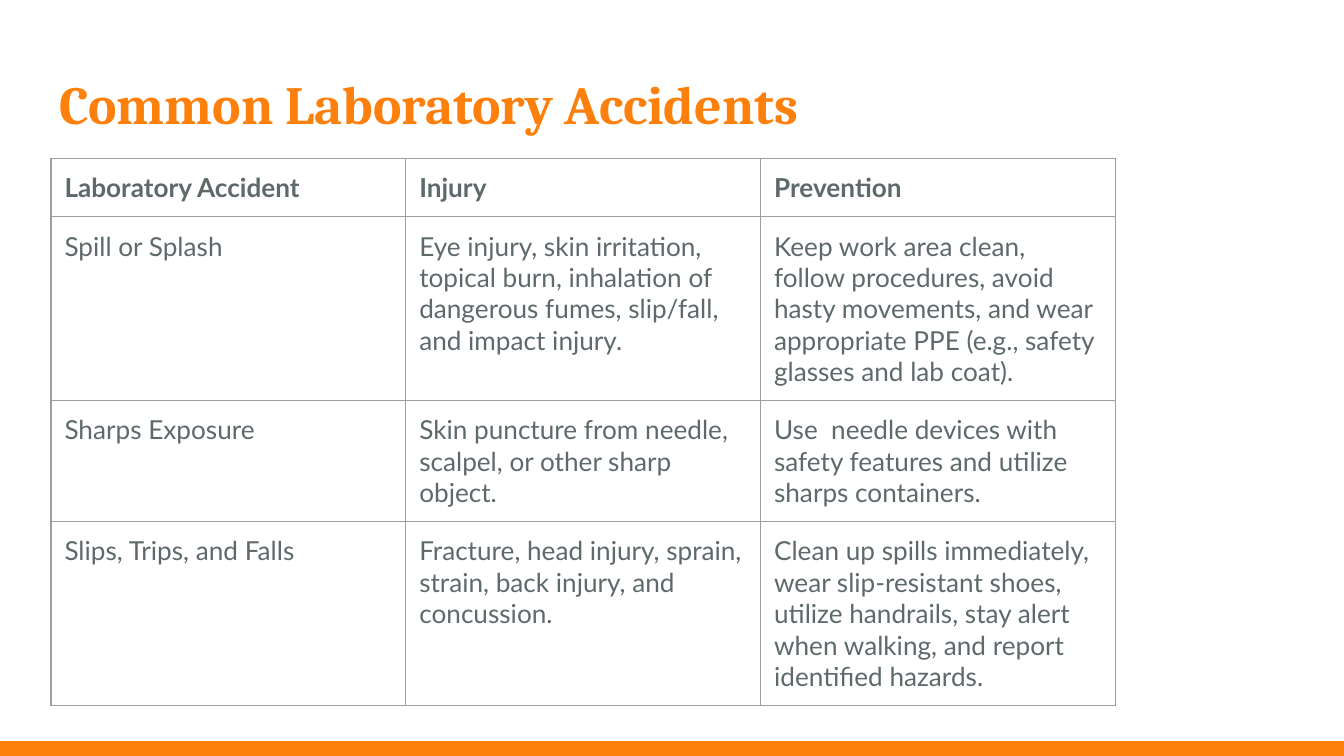
"""Build a slide with a table of common laboratory accidents."""
from lxml import etree
from pptx import Presentation
from pptx import util as u
from pptx.dml.color import RGBColor
from pptx.enum import shapes, text
from pptx.oxml.ns import qn

COLORS = {"accent": "FD800D", "body": "5E696C", "border": "9E9E9E", "white": "FFFFFF"}
MARGINS = dict.fromkeys(("margin_left", "margin_top", "margin_right", "margin_bottom"), u.Inches(0.1))
TITLE_FONT = {"name": "Cambria", "size": u.Pt(28.8), "bold": True}
BODY_FONT = {"name": "Lato", "size": u.Pt(14)}
ROWS = [
    ("Laboratory Accident", "Injury", "Prevention"),
    (
        "Spill or Splash",
        "Eye injury, skin irritation, topical burn, inhalation of dangerous fumes, slip/fall, and impact injury.",
        "Keep work area clean, follow procedures, avoid hasty movements, and wear appropriate PPE "
        "(e.g., safety glasses and lab coat).",
    ),
    (
        "Sharps Exposure",
        "Skin puncture from needle, scalpel, or other sharp object.",
        "Use  needle devices with safety features and utilize sharps containers.",
    ),
    (
        "Slips, Trips, and Falls",
        "Fracture, head injury, sprain, strain, back injury, and concussion.",
        "Clean up spills immediately, wear slip-resistant shoes, utilize handrails, stay alert when walking, "
        "and report identified hazards.",
    ),
]


def apply(target, values):
    for name, value in values.items():
        setattr(target, name, value)


def write(frame, words, font, color):
    para = frame.paragraphs[0]
    para.alignment = text.PP_ALIGN.LEFT
    span = para.add_run()
    span.text = words
    apply(span.font, font)
    span.font.color.rgb = RGBColor.from_string(COLORS[color])


deck = Presentation()
page_width = u.Inches(10)
page_height = page_width * 9 // 16
apply(deck, {"slide_width": page_width, "slide_height": page_height})
page = deck.slides.add_slide(deck.slide_layouts[5])
page.background.fill.solid()
page.background.fill.fore_color.rgb = RGBColor.from_string(COLORS["white"])

bar_height = u.Inches(0.11)
bar = page.shapes.add_shape(
    shapes.MSO_SHAPE.RECTANGLE, u.Inches(0), page_height - bar_height, page_width, bar_height
)
bar.shadow.inherit = False
bar.fill.solid()
bar.fill.fore_color.rgb = RGBColor.from_string(COLORS["accent"])
bar.line.fill.background()

title = page.shapes.title
apply(title, {"left": u.Inches(0.34), "top": u.Inches(0.43), "width": u.Inches(9.32), "height": u.Inches(0.68)})
apply(title.text_frame, {
    **MARGINS,
    "word_wrap": True,
    "auto_size": text.MSO_AUTO_SIZE.NONE,
    "vertical_anchor": text.MSO_ANCHOR.TOP,
})
write(title.text_frame, "Common Laboratory Accidents", TITLE_FONT, "accent")

column_width, row_height = u.Inches(2.64), u.Inches(0.42)
table = page.shapes.add_table(
    len(ROWS), 3, u.Inches(0.38), u.Inches(1.18), column_width * 3, row_height * len(ROWS)
).table
apply(table, {"first_row": False, "horz_banding": False})
for column in table.columns:
    column.width = column_width
for row_index, row in enumerate(ROWS):
    table.rows[row_index].height = row_height
    for column_index, words in enumerate(row):
        cell = table.cell(row_index, column_index)
        apply(cell, {**MARGINS, "vertical_anchor": text.MSO_ANCHOR.TOP})
        write(cell.text_frame, words, {**BODY_FONT, "bold": row_index == 0}, "body")
        properties = cell._tc.get_or_add_tcPr()
        for side in ("a:lnL", "a:lnR", "a:lnT", "a:lnB"):
            border = etree.SubElement(properties, qn(side), w=str(u.Pt(0.75)))
            fill = etree.SubElement(border, qn("a:solidFill"))
            etree.SubElement(fill, qn("a:srgbClr"), val=COLORS["border"])
        cell.fill.background()

deck.save("out.pptx")
